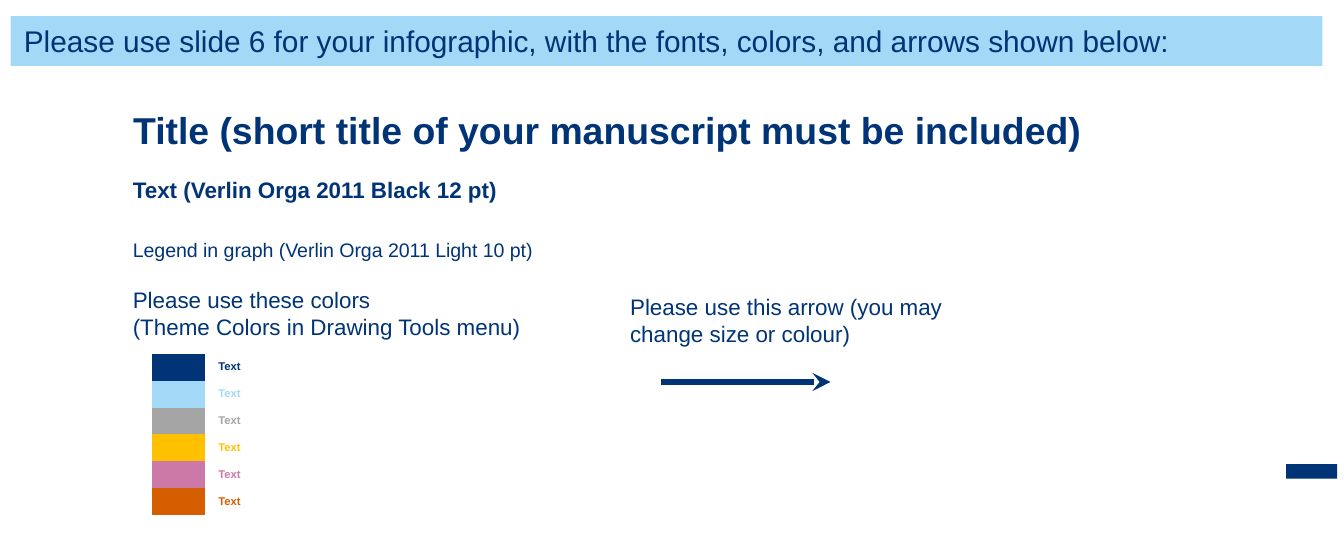
from dataclasses import dataclass

from lxml import etree
from pptx import Presentation
from pptx.dml import color as dml
from pptx.enum import shapes, text
from pptx.oxml import ns
from pptx.util import Inches, Pt


@dataclass(frozen=True)
class Theme:
    face: str = "Arial"
    navy: str = "013476"
    sky: str = "A3D8F6"
    swatch: tuple[str, ...] = (
        "013476", "A3D8F6", "A5A5A5", "FFC000", "CC79A7", "D55E00")
    head: float = 20
    lead: float = 16
    body: float = 12
    note: float = 10.5
    tiny: float = 6
    line: float = 3.25


@dataclass(frozen=True)
class Box:
    left: float
    top: float
    width: float
    height: float

    def size(self) -> tuple:
        return tuple(map(Inches, (self.left, self.top, self.width, self.height)))


@dataclass(frozen=True)
class Label:
    box: Box
    words: str
    size: float
    bold: bool = False


LOOK = Theme()
PLAIN = "{2D5ABB26-0587-4C30-8999-92F81FD0307C}"

TITLE = Label(Box(0.89, 0.75, 8.62, 0.44),
              "Title (short title of your manuscript must be included)",
              LOOK.head, True)
BANNER = Label(Box(0.08, 0.12, 9.76, 0.37),
               "Please use slide 6 for your infographic, with the fonts, "
               "colors, and arrows shown below:", LOOK.lead)
LABELS = (
    Label(Box(0.89, 1.26, 7.69, 0.3),
          "Text (Verlin Orga 2011 Black 12 pt)", LOOK.body, True),
    Label(Box(0.89, 1.72, 5.82, 0.29),
          "Legend in graph (Verlin Orga 2011 Light 10 pt)", LOOK.note),
    Label(Box(0.89, 2.08, 3.16, 0.5),
          "Please use these colors\v(Theme Colors in Drawing Tools menu)",
          LOOK.body),
    Label(Box(4.59, 2.13, 3.06, 0.5),
          "Please use this arrow (you may change size or colour)", LOOK.body),
)


def style(para, size: float, tint: str, bold: bool = False) -> None:
    para.alignment = text.PP_ALIGN.LEFT
    font = para.font
    font.name, font.size, font.bold = LOOK.face, Pt(size), bold
    font.color.rgb = dml.RGBColor.from_string(tint)


def write(shape, label: Label) -> None:
    shape.left, shape.top, shape.width, shape.height = label.box.size()
    frame = shape.text_frame
    frame.text = label.words
    frame.word_wrap = True
    frame.auto_size = text.MSO_AUTO_SIZE.NONE
    frame.vertical_anchor = text.MSO_ANCHOR.TOP
    para = frame.paragraphs[0]
    para.line_spacing = 1.0
    style(para, label.size, LOOK.navy, label.bold)


def block(slide, box: Box, tint: str):
    shape = slide.shapes.add_shape(shapes.MSO_SHAPE.RECTANGLE, *box.size())
    shape.shadow.inherit = False
    shape.fill.solid()
    shape.fill.fore_color.rgb = dml.RGBColor.from_string(tint)
    shape.line.fill.background()
    return shape


def arrow(slide, left: float, right: float, level: float) -> None:
    link = slide.shapes.add_connector(
        shapes.MSO_CONNECTOR.STRAIGHT,
        *map(Inches, (left, level, right, level)))
    link.line.width = Pt(LOOK.line)
    link.line.color.rgb = dml.RGBColor.from_string(LOOK.navy)
    stroke = link.line._get_or_add_ln()
    etree.SubElement(stroke, ns.qn("a:tailEnd"), type="stealth")
    etree.SubElement(link._element.spPr, ns.qn("a:effectLst"))


def legend(slide, box: Box) -> None:
    tints = LOOK.swatch
    grid = slide.shapes.add_table(len(tints), 2, *box.size()).table
    grid.first_row = grid.horz_banding = False
    grid._tbl.tblPr.find(ns.qn("a:tableStyleId")).text = PLAIN
    for row, tint in zip(grid.rows, tints):
        patch, name = row.cells
        patch.fill.solid()
        patch.fill.fore_color.rgb = dml.RGBColor.from_string(tint)
        name.fill.background()
        name.text = "Text"
        for cell in row.cells:
            cell.margin_top = cell.margin_bottom = 0
            cell.vertical_anchor = text.MSO_ANCHOR.MIDDLE
            style(cell.text_frame.paragraphs[0], LOOK.tiny, tint, True)
        end = etree.SubElement(
            patch.text_frame.paragraphs[0]._p, ns.qn("a:endParaRPr"))
        end.set("sz", str(int(LOOK.tiny * 100)))


def main() -> None:
    deck = Presentation()
    deck.slide_width, deck.slide_height = Inches(10), Inches(4)
    slide = deck.slides.add_slide(deck.slide_layouts[5])
    block(slide, Box(9.57, 3.45, 0.38, 0.11), LOOK.navy)
    write(slide.shapes.title, TITLE)
    for label in LABELS:
        write(slide.shapes.add_textbox(*label.box.size()), label)
    arrow(slide, 4.92, 6.18, 2.84)
    write(block(slide, BANNER.box, LOOK.sky), BANNER)
    legend(slide, Box(1.13, 2.63, 0.79, 1.2))
    deck.save("out.pptx")


if __name__ == "__main__":
    main()
